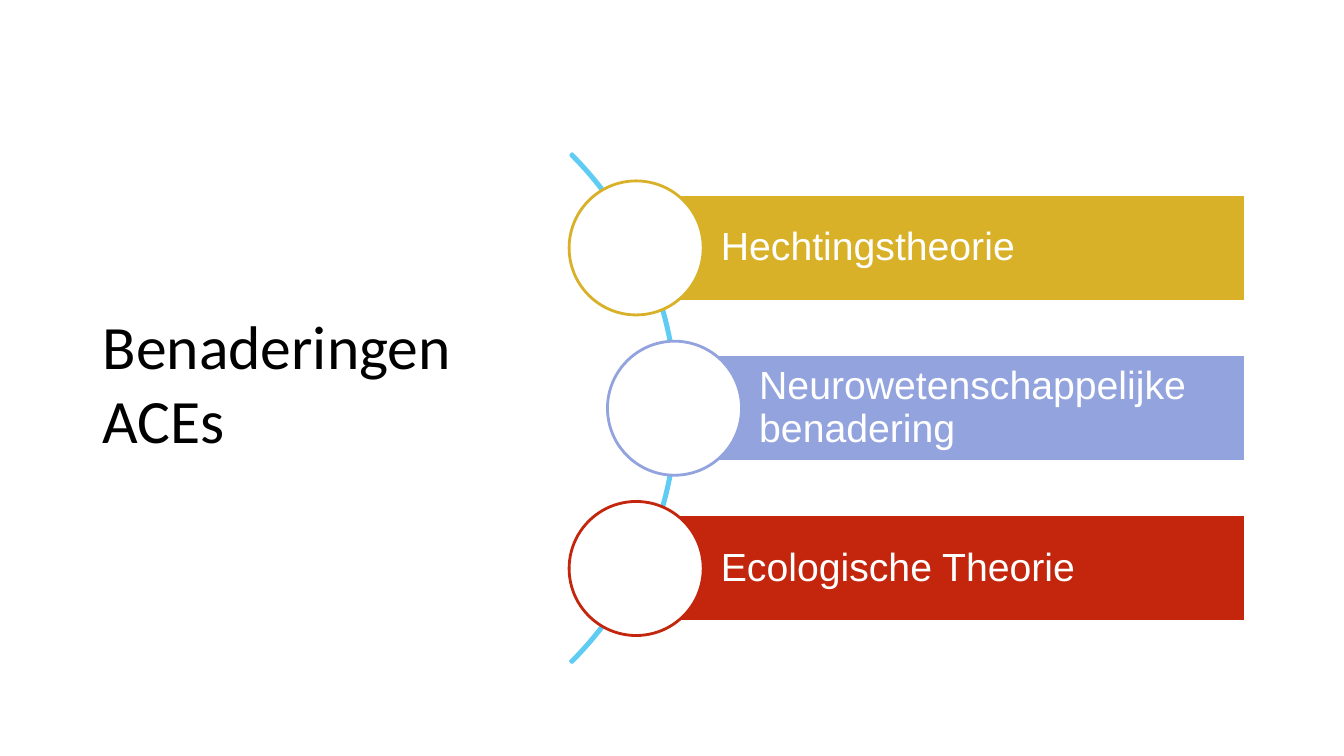
import pptx
import pptx.util
import pptx.dml.color
import pptx.enum.shapes
import pptx.enum.text

Inches, Pt = pptx.util.Inches, pptx.util.Pt
SHAPE = pptx.enum.shapes.MSO_SHAPE
ANCHOR = pptx.enum.text.MSO_ANCHOR
ALIGN = pptx.enum.text.PP_ALIGN

COLORS = {
    "white": "FFFFFF",
    "black": "000000",
    "arc": "5ECCF3",
    "gold": "D9B128",
    "lavender": "93A3DE",
    "red": "C3260C",
}
TITLE = "Benaderingen ACEs"
APPROACHES = [
    ("Hechtingstheorie", "gold", 6.31),
    ("Neurowetenschappelijke benadering", "lavender", 6.69),
    ("Ecologische Theorie", "red", 6.31),
]
BAR_RIGHT, BAR_HEIGHT = 12.35, 1.06
FIRST_CENTER, STEP = 2.46, 1.59
CIRCLE = 1.33


def color(name):
    return pptx.dml.color.RGBColor.from_string(COLORS[name])


def add_shape(s, kind, left, top, width, height, fill, line):
    sp = s.shapes.add_shape(kind, Inches(left), Inches(top), Inches(width), Inches(height))
    sp.shadow.inherit = False
    if fill:
        sp.fill.solid()
        sp.fill.fore_color.rgb = color(fill)
    else:
        sp.fill.background()
    sp.line.color.rgb = color(line)
    sp.line.width = Pt(2)
    return sp


def write(sp, text, font, size, ink, anchor, insets, spacing):
    tf = sp.text_frame
    tf.word_wrap = True
    tf.vertical_anchor = anchor
    tf.margin_left, tf.margin_top, tf.margin_right, tf.margin_bottom = map(Inches, insets)
    p = tf.paragraphs[0]
    p.alignment = ALIGN.LEFT
    p.line_spacing = spacing
    r = p.add_run()
    r.text = text
    r.font.name = font
    r.font.size = Pt(size)
    r.font.color.rgb = color(ink)


prs = pptx.Presentation()
prs.slide_width, prs.slide_height = Inches(13.33), Inches(7.5)
s = prs.slides.add_slide(prs.slide_layouts[6])

title = s.shapes.add_textbox(Inches(0.92), Inches(0.5), Inches(4.44), Inches(4.07))
write(title, TITLE, "Calibri", 44, "black", ANCHOR.BOTTOM, (0.1, 0.05, 0.1, 0.05), 1.0)

arc = add_shape(s, SHAPE.BLOCK_ARC, -0.42, 0.48, 7.14, 7.14, None, "arc")
for i, value in enumerate((189, 27, 0.3 / 100)):
    arc.adjustments[i] = value

for i, (text, accent, left) in enumerate(APPROACHES):
    center = FIRST_CENTER + i * STEP
    bar = add_shape(s, SHAPE.RECTANGLE, left, center - BAR_HEIGHT / 2,
                    BAR_RIGHT - left, BAR_HEIGHT, accent, "white")
    write(bar, text, "Arial", 28, "white", ANCHOR.MIDDLE, (0.84, 0.08, 0.08, 0.08), 0.9)
    add_shape(s, SHAPE.OVAL, left - CIRCLE / 2, center - CIRCLE / 2,
              CIRCLE, CIRCLE, "white", accent)

prs.save("out.pptx")
